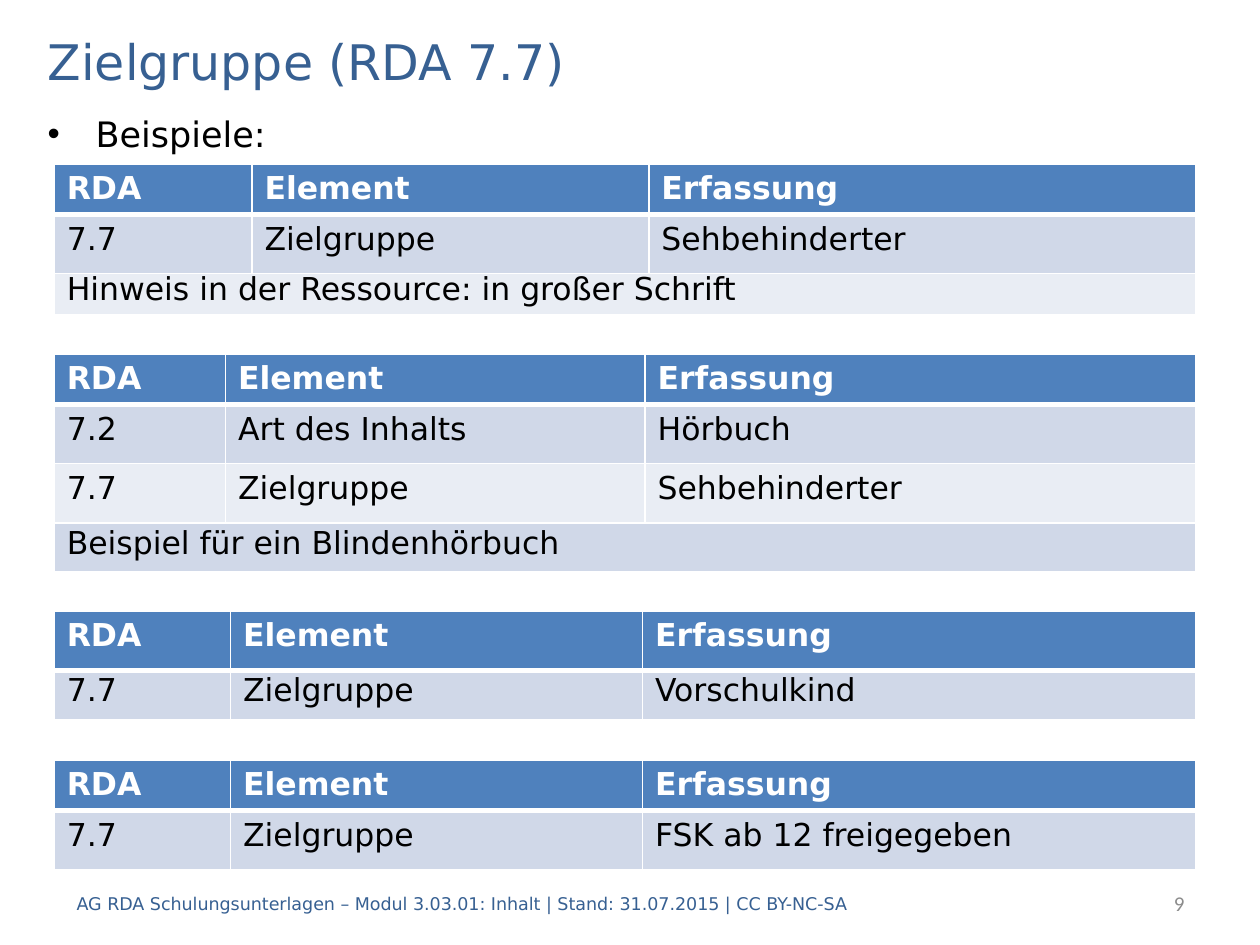
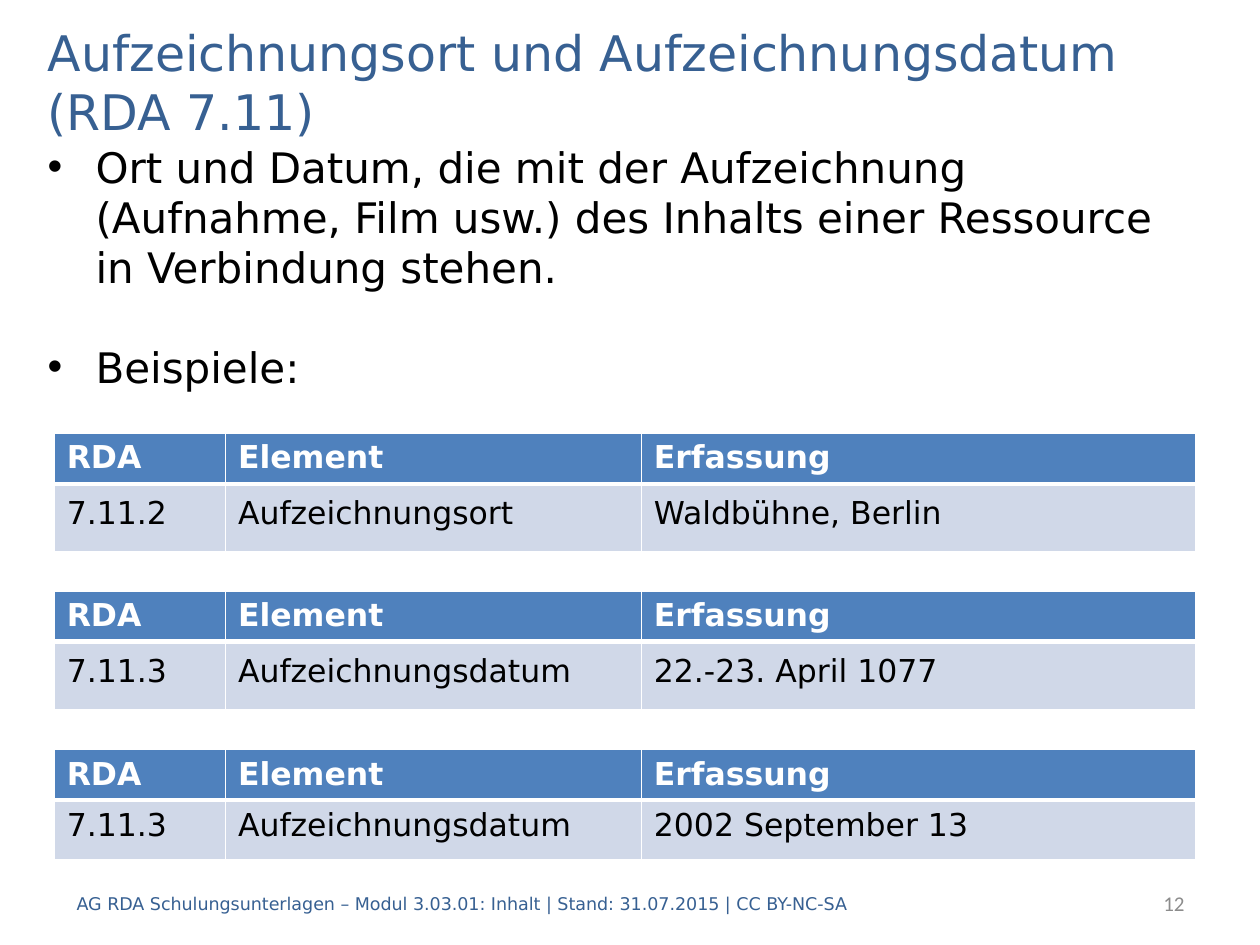
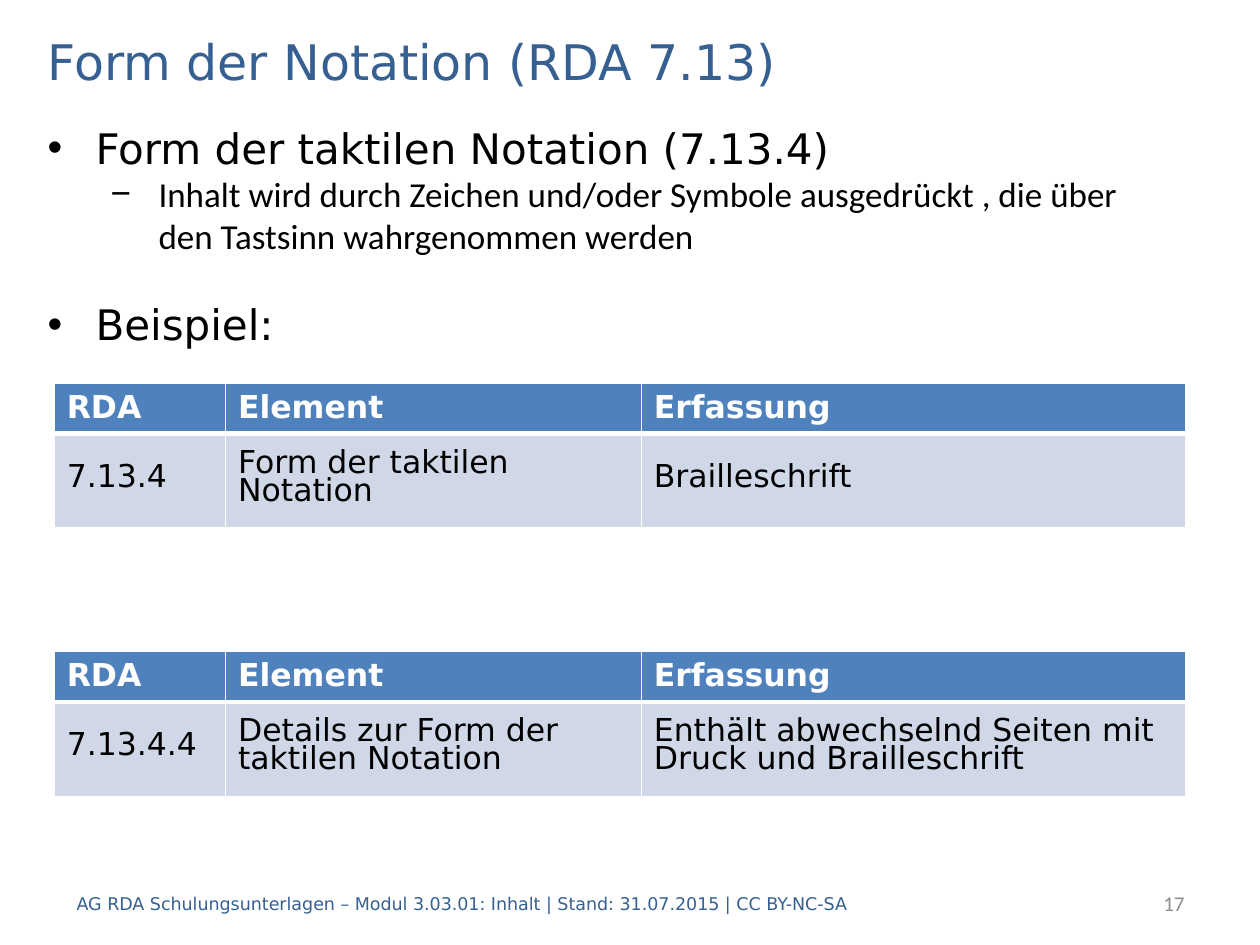
import pptx
import pptx.util
import pptx.oxml.ns
import pptx.dml.color
import pptx.enum.text
import lxml.etree

Inches, Pt = pptx.util.Inches, pptx.util.Pt
ANCHOR = pptx.enum.text.MSO_ANCHOR
ALIGN = pptx.enum.text.PP_ALIGN
FIT = pptx.enum.text.MSO_AUTO_SIZE

COLORS = {"title": "376092", "head": "4F81BD", "odd": "D0D8E8", "even": "E9EDF4",
          "white": "FFFFFF", "black": "000000", "gray": "8C8C8C"}
SANS, CALIBRI = "DejaVu Sans", "Calibri"
FOOT = "AG RDA Schulungsunterlagen – Modul 3.03.01: Inhalt | Stand: 31.07.2015 | CC BY-NC-SA"
HEAD = ("RDA", "Element", "Erfassung")
LEFT, EDGE = 0.43, 0.28
LEVELS = [("•", 0.38, SANS), ("−", 0.88, CALIBRI)]
COLS = (1.36, 3.3, 4.4)
WIDE = (1.4, 3.27, 4.39)
SLIM = (1.36, 3.3, 4.32)

SLIDES = [
    {"title": "Zielgruppe (RDA 7.7)", "box": (0.2, 0.56), "page": "9",
     "body": (0.84, 7.22, 0.44), "points": [(0, "Beispiele:", 20, 0)],
     "tables": [
         (1.3, (1.57, 3.15, 4.34), (0.4, 0.47, 0.33),
          [("7.7", "Zielgruppe", "Sehbehinderter"),
           ("Hinweis in der Ressource: in großer Schrift",)]),
         (2.81, (1.36, 3.33, 4.37), (0.4, 0.47, 0.47, 0.39),
          [("7.2", "Art des Inhalts", "Hörbuch"),
           ("7.7", "Zielgruppe", "Sehbehinderter"),
           ("Beispiel für ein Blindenhörbuch",)]),
         (4.85, WIDE, (0.47, 0.39), [("7.7", "Zielgruppe", "Vorschulkind")]),
         (6.03, WIDE, (0.4, 0.47), [("7.7", "Zielgruppe", "FSK ab 12 freigegeben")]),
     ]},
    {"title": "Aufzeichnungsort und Aufzeichnungsdatum (RDA 7.11)",
     "box": (0.21, 0.87), "page": "12", "body": (1.07, 9.02, 2.12),
     "points": [
         (0, "Ort und Datum, die mit der Aufzeichnung (Aufnahme, Film usw.) des Inhalts "
             "einer Ressource in Verbindung stehen.", 24, 0),
         (0, "Beispiele:", 24, 28)],
     "tables": [
         (3.44, COLS, (0.4, 0.54), [("7.11.2", "Aufzeichnungsort", "Waldbühne, Berlin")]),
         (4.69, COLS, (0.4, 0.54), [("7.11.3", "Aufzeichnungsdatum", "22.-23. April 1077")]),
         (5.95, COLS, (0.4, 0.47), [("7.11.3", "Aufzeichnungsdatum", "2002 September 13")]),
     ]},
    {"title": "Form der Notation (RDA 7.13)", "box": (0.2, 0.56), "page": "17",
     "body": (0.92, 9.02, 1.92),
     "points": [
         (0, "Form der taktilen Notation (7.13.4)", 24, 0),
         (1, "Inhalt wird durch Zeichen und/oder Symbole ausgedrückt , die über den "
             "Tastsinn wahrgenommen werden", 20, 0),
         (0, "Beispiel:", 24, 24)],
     "tables": [
         (3.04, SLIM, (0.4, 0.75), [("7.13.4", "Form der taktilen Notation", "Brailleschrift")]),
         (5.17, SLIM, (0.4, 0.75),
          [("7.13.4.4", "Details zur Form der taktilen Notation",
            "Enthält abwechselnd Seiten mit Druck und Brailleschrift")]),
     ]},
]


def color(name):
    return pptx.dml.color.RGBColor.from_string(COLORS[name])


def add_xml(node, tag, **attrs):
    return lxml.etree.SubElement(node, pptx.oxml.ns.qn(tag), attrs)


def style(para, size, tint, face=SANS, bold=False):
    for run in para.runs:
        font = run.font
        font.size, font.name, font.bold = Pt(size), face, bold
        font.color.rgb = color(tint)


def add_box(slide, *place):
    frame = slide.shapes.add_textbox(*map(Inches, place)).text_frame
    frame.word_wrap = True
    return frame


def add_title(slide, text, top, height):
    shape = slide.shapes.title
    shape.left, shape.top, shape.width, shape.height = map(Inches, (EDGE, top, 9.45, height))
    frame = shape.text_frame
    frame.text = text
    frame.auto_size = FIT.NONE
    frame.vertical_anchor = ANCHOR.MIDDLE
    frame.paragraphs[0].alignment = ALIGN.LEFT
    style(frame.paragraphs[0], 28, "title")


def add_points(slide, place, points):
    frame = add_box(slide, EDGE, *place)
    frame.auto_size = FIT.SHAPE_TO_FIT_TEXT
    frame.text = "\n".join(text for _, text, _, _ in points)
    for para, (level, _, size, gap) in zip(frame.paragraphs, points):
        mark, indent, face = LEVELS[level]
        para.level = level
        para.space_before = Pt(gap)
        style(para, size, "black", face)
        props = para._p.get_or_add_pPr()
        props.set("marL", str(Inches(indent)))
        props.set("indent", str(Inches(-0.38)))
        add_xml(props, "a:buFont", typeface="Arial")
        add_xml(props, "a:buChar", char=mark)


def add_lines(cell, base):
    props = cell._tc.get_or_add_tcPr()
    for side, width in (("L", 1), ("R", 1), ("T", 1), ("B", base)):
        line = add_xml(props, "a:ln" + side, w=str(Pt(width)))
        add_xml(add_xml(line, "a:solidFill"), "a:srgbClr", val=COLORS["white"])


def fill_cell(cell, row, text):
    add_lines(cell, 1 if row else 3)
    cell.fill.solid()
    cell.fill.fore_color.rgb = color("head" if row == 0 else "odd" if row % 2 else "even")
    cell.text = text
    para = cell.text_frame.paragraphs[0]
    if row == 0:
        style(para, 18, "white", bold=True)
        return
    cell.vertical_anchor = ANCHOR.MIDDLE
    cell.margin_top = cell.margin_bottom = 0
    para.line_spacing = Pt(16)
    para.space_before = para.space_after = Pt(6)
    style(para, 18, "black")


def add_grid(slide, top, widths, heights, rows):
    place = map(Inches, (LEFT, top, sum(widths), sum(heights)))
    table = slide.shapes.add_table(len(heights), len(widths), *place).table
    for col, width in zip(table.columns, widths):
        col.width = Inches(width)
    for row, height in zip(table.rows, heights):
        row.height = Inches(height)
    for r, texts in enumerate([HEAD] + rows):
        if len(texts) == 1:
            table.cell(r, 0).merge(table.cell(r, len(widths) - 1))
        for c in range(len(widths)):
            fill_cell(table.cell(r, c), r, texts[c] if c < len(texts) else "")


def add_foot(slide, page):
    for left, width, text, size, tint, face, side in (
            (0.51, 9.1, FOOT, 10, "title", SANS, ALIGN.LEFT),
            (7.91, 1.59, page, 12, "gray", CALIBRI, ALIGN.RIGHT)):
        frame = add_box(slide, left, 6.97, width, 0.4)
        frame.vertical_anchor = ANCHOR.MIDDLE
        frame.text = text
        frame.paragraphs[0].alignment = side
        style(frame.paragraphs[0], size, tint, face)


def main():
    deck = pptx.Presentation()
    deck.slide_width, deck.slide_height = Inches(10), Inches(7.5)
    for item in SLIDES:
        slide = deck.slides.add_slide(deck.slide_layouts[5])
        add_title(slide, item["title"], *item["box"])
        add_points(slide, item["body"], item["points"])
        for table in item["tables"]:
            add_grid(slide, *table)
        add_foot(slide, item["page"])
    deck.save("out.pptx")


if __name__ == "__main__":
    main()
